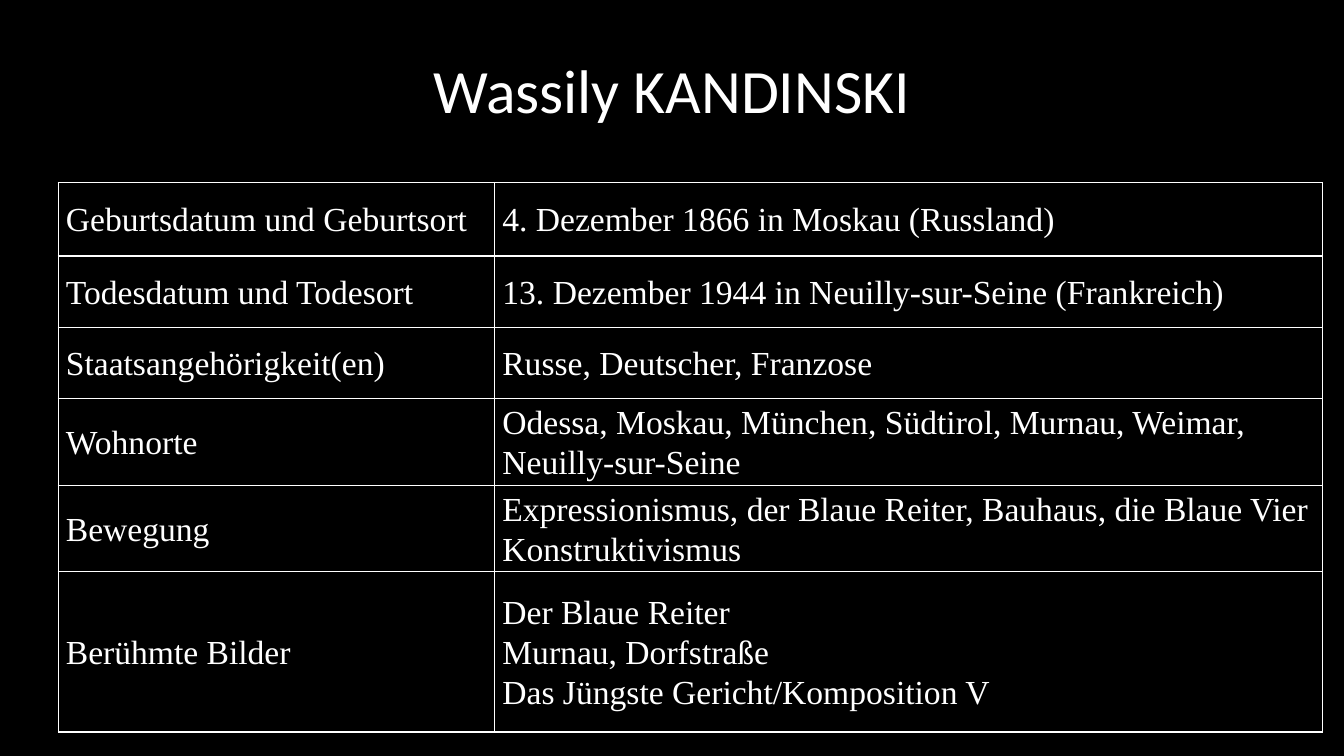
"""Build a fact sheet slide about the painter Wassily Kandinski."""
from lxml.etree import SubElement
from pptx import Presentation
from pptx.dml.color import RGBColor
from pptx.enum.text import MSO_ANCHOR as Anchor, PP_ALIGN as Align
from pptx.oxml.ns import qn
from pptx.util import Cm, Pt

COLORS = {"background": "000000", "text": "FFFFFF", "border": "FFFFFF"}
FACTS = [
    (1.85, "Geburtsdatum und Geburtsort", "4. Dezember 1866 in Moskau (Russland)"),
    (1.8, "Todesdatum und Todesort", "13. Dezember 1944 in Neuilly-sur-Seine (Frankreich)"),
    (1.8, "Staatsangehörigkeit(en)", "Russe, Deutscher, Franzose"),
    (2.18, "Wohnorte", "Odessa, Moskau, München, Südtirol, Murnau, Weimar, Neuilly-sur-Seine"),
    (1.8, "Bewegung", "Expressionismus, der Blaue Reiter, Bauhaus, die Blaue Vier Konstruktivismus"),
    (4.04, "Berühmte Bilder", "Der Blaue Reiter\nMurnau, Dorfstraße\nDas Jüngste Gericht/Komposition V"),
]
COLUMN_WIDTHS = [11, 20.85]


def write(frame, text, font_name, size, spacing, align):
    frame.text = text
    for paragraph in frame.paragraphs:
        paragraph.line_spacing = spacing
        paragraph.alignment = align
        for run in paragraph.runs:
            run.font.name = font_name
            run.font.size = Pt(size)
            run.font.color.rgb = RGBColor.from_string(COLORS["text"])


def add_border(cell, side, width):
    line = SubElement(cell._tc.get_or_add_tcPr(), qn(f"a:ln{side}"), w=str(Pt(width)))
    fill = SubElement(line, qn("a:solidFill"))
    SubElement(fill, qn("a:srgbClr"), val=COLORS["border"])


prs = Presentation()
prs.slide_width = Cm(33.87)
prs.slide_height = Cm(19.05)
slide = prs.slides.add_slide(prs.slide_layouts[6])
slide.background.fill.solid()
slide.background.fill.fore_color.rgb = RGBColor.from_string(COLORS["background"])

painter = slide.shapes.add_textbox(Cm(2.33), Cm(1.01), Cm(29.21), Cm(2.69)).text_frame
painter.word_wrap = True
painter.vertical_anchor = Anchor.MIDDLE
write(painter, "Wassily KANDINSKI", "Calibri", 44, 0.9, Align.CENTER)

table_height = sum(height for height, *_ in FACTS)
facts = slide.shapes.add_table(
    len(FACTS), len(COLUMN_WIDTHS), Cm(1.47), Cm(4.6), Cm(sum(COLUMN_WIDTHS)), Cm(table_height)
).table
for column, width in zip(facts.columns, COLUMN_WIDTHS):
    column.width = Cm(width)

for row, (height, *entries) in enumerate(FACTS):
    facts.rows[row].height = Cm(height)
    for col, entry in enumerate(entries):
        cell = facts.cell(row, col)
        cell.vertical_anchor = Anchor.MIDDLE
        cell.margin_left = cell.margin_right = Cm(0.19)
        cell.margin_top = cell.margin_bottom = 0
        write(cell.text_frame, entry, "Times New Roman", 24, 1.07, Align.LEFT)
        for side in "LRTB":
            below_birth = (row, side) in [(0, "B"), (1, "T")]
            add_border(cell, side, 1.5 if below_birth else 1)
        cell.fill.solid()
        cell.fill.fore_color.rgb = RGBColor.from_string(COLORS["background"])

prs.save("out.pptx")
